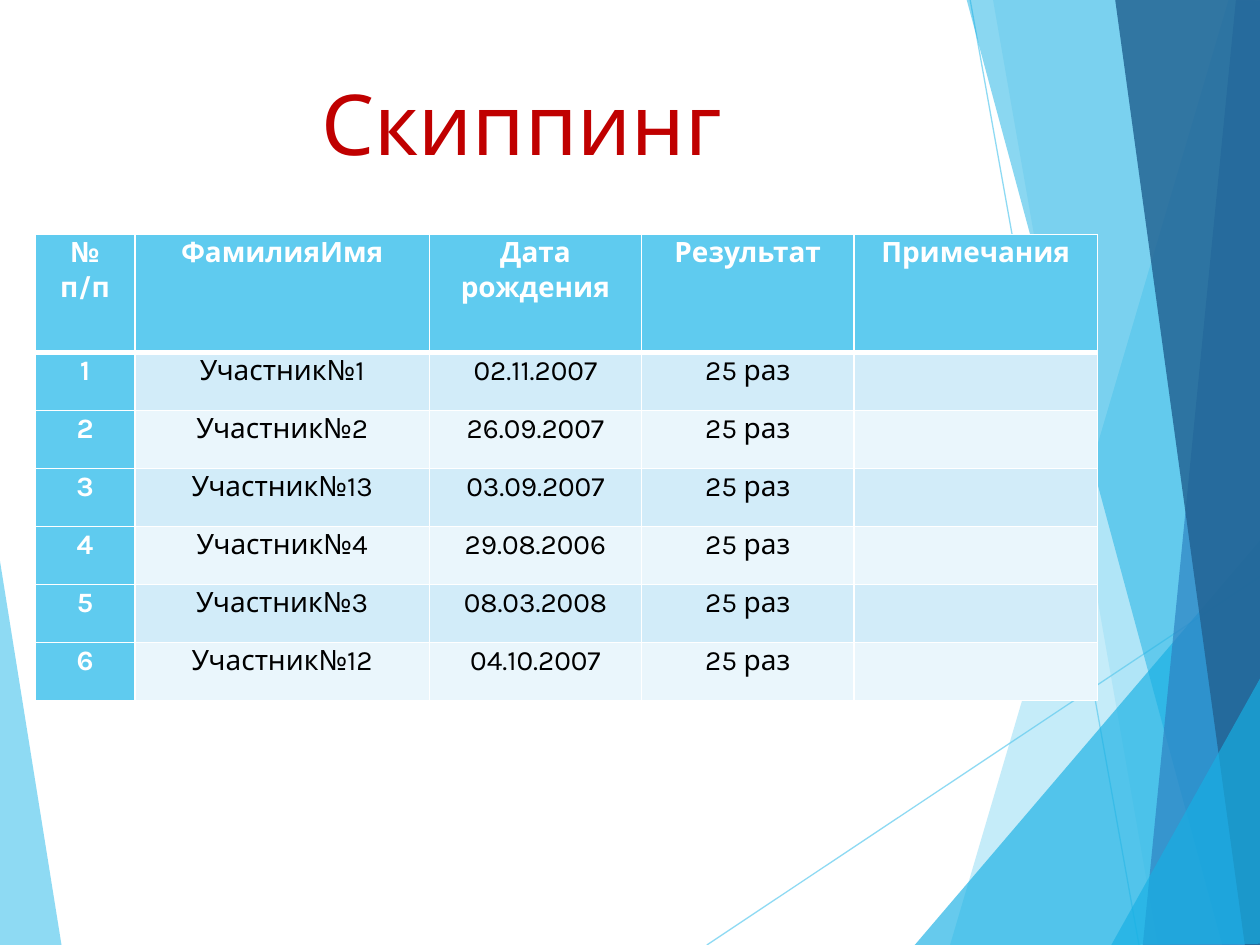
from lxml.etree import SubElement
from pptx import Presentation
from pptx.dml.color import RGBColor
from pptx.enum.shapes import MSO_CONNECTOR
from pptx.enum.text import MSO_ANCHOR, PP_ALIGN
from pptx.oxml import parse_xml
from pptx.oxml.ns import nsdecls, qn
from pptx.util import Inches, Pt

SKY = RGBColor(0x5F, 0xCB, 0xEF)
CYAN = RGBColor(0x17, 0xB0, 0xE4)
BLUE = RGBColor(0x2E, 0x83, 0xC3)
NAVY = RGBColor(0x22, 0x62, 0x92)
RED = RGBColor(0xC0, 0x00, 0x00)
WHITE = RGBColor(0xFF, 0xFF, 0xFF)
BLACK = RGBColor(0x00, 0x00, 0x00)
BAND_DARK = RGBColor(0xD2, 0xEC, 0xF9)
BAND_LIGHT = RGBColor(0xEA, 0xF6, 0xFC)
FONT = "Karla"


def set_opacity(fill_parent, percent):
    color = fill_parent.find(qn("a:solidFill"))[0]
    SubElement(color, qn("a:alpha")).set("val", str(percent * 1000))


def set_border(cell, side, width):
    line = parse_xml(
        f'<a:{side} {nsdecls("a")} w="{Pt(width)}"><a:solidFill>'
        f'<a:srgbClr val="{WHITE}"/></a:solidFill></a:{side}>')
    cell._tc.get_or_add_tcPr().append(line)


prs = Presentation()
prs.slide_width, prs.slide_height = Inches(10), Inches(7.5)
slide = prs.slides.add_slide(prs.slide_layouts[5])
shapes = slide.shapes

# Decorative facets and rays: color, opacity in percent, corner points
left_facet = (SKY, 70, [(-0.01, 4.39), (0.49, 7.51), (-0.01, 7.5)])
right_facets = [
    (SKY, 36, [(9.75, 0), (7.54, 7.5), (10.02, 7.51), (10.01, 0.01)]),
    (SKY, 20, [(7.88, -0.01), (9.19, 7.5), (10.01, 7.5), (10.01, -0.01)]),
    (CYAN, 66, [(7.26, 7.5), (10, 4.29), (10.01, 7.5)]),
    (CYAN, 50, [(7.67, -0.01), (9.7, 7.5), (10.01, 7.49), (10.01, -0.01)]),
    (BLUE, 70, [(9.81, -0.01), (9.07, 7.5), (10.01, 7.5), (10, -0.01)]),
    (NAVY, 82, [(8.85, -0.01), (9.88, 7.5), (10.02, 7.5), (10, -0.01)]),
    (CYAN, 66, [(8.82, 7.5), (10.02, 5.35), (10.02, 7.49)]),
]
rays = [(SKY, 70, [(5.61, 7.5), (10.01, 4.57)]),
        (SKY, 70, [(7.7, 0), (9.04, 7.5)])]

for color, opacity, points in [left_facet, *rays, *right_facets]:
    corners = [(Inches(x), Inches(y)) for x, y in points]
    if len(corners) == 2:
        ray = shapes.add_connector(MSO_CONNECTOR.STRAIGHT, *corners[0], *corners[1])
        ray.line.color.rgb = color
        ray.line.width = Pt(0.75)
        set_opacity(ray.line._ln, opacity)
        SubElement(ray._element.spPr, qn("a:effectLst"))
    else:
        builder = shapes.build_freeform(*corners[0])
        builder.add_line_segments(corners[1:], close=True)
        facet = builder.convert_to_shape()
        facet.shadow.inherit = False
        facet.fill.solid()
        facet.fill.fore_color.rgb = color
        set_opacity(facet._element.spPr, opacity)
        facet.line.fill.background()

# Title, in front of the decoration
title = shapes.title
shapes._spTree.append(title._element)
title.left, title.top = Inches(0.67), Inches(0.52)
title.width, title.height = Inches(6.94), Inches(1.59)
title.text_frame.text = "Скиппинг"
title.text_frame.vertical_anchor = MSO_ANCHOR.TOP
heading = title.text_frame.paragraphs[0]
heading.alignment = PP_ALIGN.CENTER
heading.font.size = Pt(48)
heading.font.name = FONT
heading.font.color.rgb = RED

# Results table
header = ["№ п/п", "ФамилияИмя", "Дата рождения", "Результат", "Примечания"]
participants = [
    ("Участник№1", "02.11.2007"),
    ("Участник№2", "26.09.2007"),
    ("Участник№13", "03.09.2007"),
    ("Участник№4", "29.08.2006"),
    ("Участник№3", "08.03.2008"),
    ("Участник№12", "04.10.2007"),
]
rows = [header] + [[str(number), name, born, "25 раз", ""]
                   for number, (name, born) in enumerate(participants, 1)]
column_widths = [0.79, 2.34, 1.68, 1.69, 1.93]

results = shapes.add_table(len(rows), len(header), Inches(0.28), Inches(1.86),
                           Inches(8.43), Inches(3.7)).table
results.first_col = True
for column, width in zip(results.columns, column_widths):
    column.width = Inches(width)

for r, row in enumerate(rows):
    results.rows[r].height = Inches(0.94 if r == 0 else 0.46)
    for c, text in enumerate(row):
        cell = results.cell(r, c)
        is_heading = r == 0 or c == 0
        cell.margin_left = cell.margin_right = Inches(0.07)
        cell.margin_top = cell.margin_bottom = 0
        set_border(cell, "lnL", 1)
        set_border(cell, "lnR", 1)
        set_border(cell, "lnT", 3 if r == 1 else 1)
        set_border(cell, "lnB", 3 if r == 0 else 1)
        cell.fill.solid()
        cell.fill.fore_color.rgb = (
            SKY if is_heading else BAND_DARK if r % 2 else BAND_LIGHT)

        cell.text = text
        paragraph = cell.text_frame.paragraphs[0]
        paragraph.alignment = PP_ALIGN.CENTER
        paragraph.line_spacing = 1.07
        paragraph.space_after = Pt(8)
        paragraph.font.size = Pt(16)
        paragraph.font.name = FONT
        paragraph.font.bold = is_heading
        paragraph.font.color.rgb = WHITE if is_heading else BLACK

prs.save("out.pptx")
